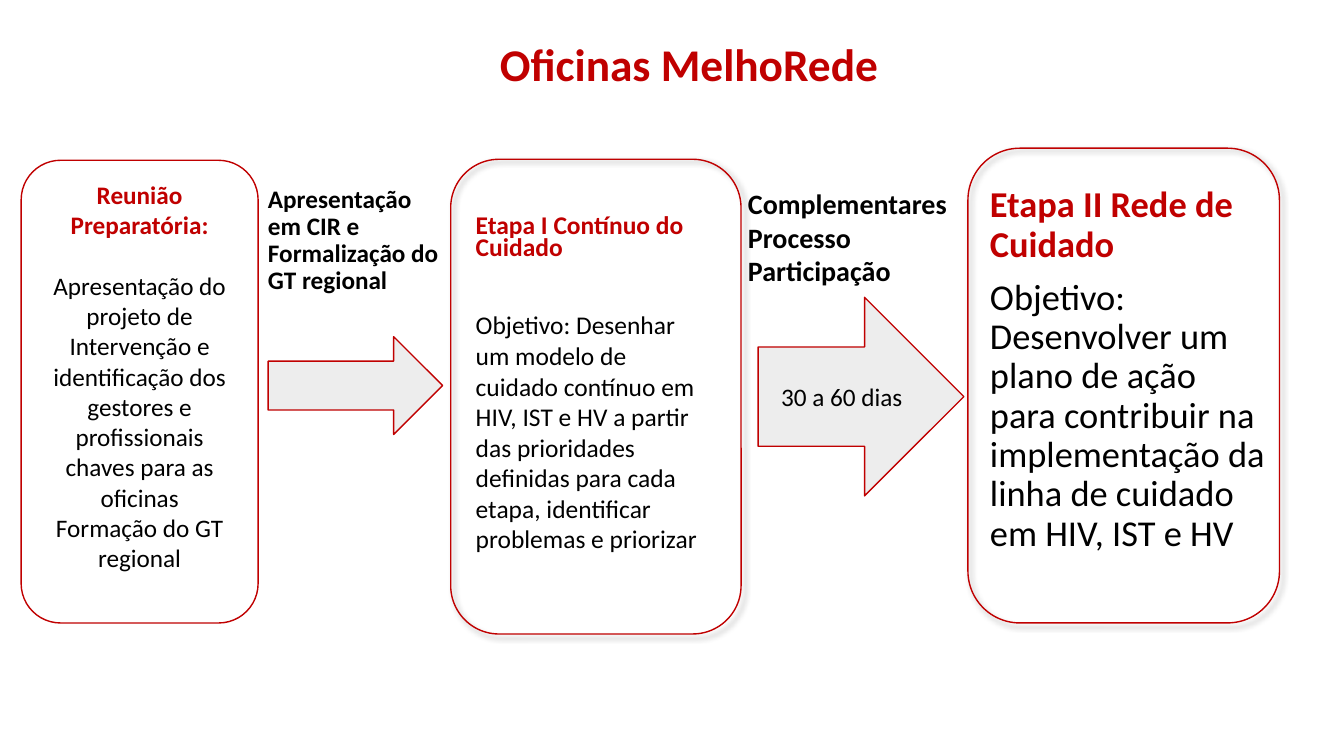
from lxml import etree
from pptx import Presentation
from pptx.dml.color import RGBColor
from pptx.enum.shapes import MSO_SHAPE as Shape
from pptx.enum.text import MSO_ANCHOR as Anchor, PP_ALIGN as Align
from pptx.oxml.ns import qn
from pptx.util import Inches, Pt

RED, BLACK, GREY = "C00000", "000000", "EDEDED"


def color(hex_code):
    """Turn a hex string into a colour."""
    return RGBColor.from_string(hex_code)


def write(frame, paragraphs, size, align=Align.LEFT, spacing=None):
    """Fill a frame with (text, colour, bold, points before) paragraphs."""
    frame.word_wrap = True
    frame.text = "\n".join(text for text, *_ in paragraphs)
    for paragraph, (_, ink, bold, before) in zip(frame.paragraphs, paragraphs):
        paragraph.alignment = align
        paragraph.space_before = Pt(before)
        if spacing:
            paragraph.line_spacing = spacing
        font = paragraph.runs[0].font
        font.name, font.size, font.bold = "Calibri", Pt(size), bold
        font.color.rgb = color(ink)


def add_text(slide, box, paragraphs, size, align=Align.LEFT, spacing=None):
    """Place a text box and return its frame."""
    frame = slide.shapes.add_textbox(*map(Inches, box)).text_frame
    write(frame, paragraphs, size, align, spacing)
    return frame


def add_outline(slide, kind, box, fill=None):
    """Place a red-outlined preset shape."""
    outline = slide.shapes.add_shape(kind, *map(Inches, box))
    outline.shadow.inherit = False
    outline.line.color.rgb = color(RED)
    outline.line.width = Pt(1)
    if fill:
        outline.fill.solid()
        outline.fill.fore_color.rgb = color(fill)
    else:
        outline.fill.background()
    return outline


def add_shadow(card):
    """Cast a soft shadow to the lower right of a card."""
    effects = card._element.spPr.find(qn("a:effectLst"))
    shadow = etree.SubElement(effects, qn("a:outerShdw"), blurRad=str(Pt(4)),
                              dist=str(Pt(3)), dir="2700000", algn="tl", rotWithShape="0")
    tone = etree.SubElement(shadow, qn("a:srgbClr"), val=BLACK)
    etree.SubElement(tone, qn("a:alpha"), val="40000")


def add_title(slide, box):
    """Write the slide title."""
    frame = add_text(slide, box, [("Oficinas MelhoRede", RED, True, 0)], 32.4, Align.CENTER, 0.9)
    frame.vertical_anchor = Anchor.MIDDLE


def add_preparation(slide, box):
    """Draw the preparatory meeting card."""
    card = add_outline(slide, Shape.ROUNDED_RECTANGLE, box)
    card.text_frame.vertical_anchor = Anchor.TOP
    card.text_frame.margin_top = Inches(0.07)
    write(card.text_frame, [
        ("Reunião Preparatória:", RED, True, 0),
        ("Apresentação do projeto de Intervenção e identificação dos gestores e "
         "profissionais chaves para as oficinas", BLACK, False, 22),
        ("Formação do GT regional", BLACK, False, 0),
    ], 18, Align.CENTER)


def add_stage_one(slide, box):
    """Draw the first stage card."""
    left, top, width, _ = box
    frame = add_text(slide, (left + 0.15, top + 0.53, width - 0.42, 3.91), [
        ("Etapa I Contínuo do Cuidado", RED, True, 0),
        ("Objetivo: Desenhar um modelo de cuidado contínuo em HIV, IST e HV a partir das "
         "prioridades definidas para cada etapa, identificar problemas e priorizar",
         BLACK, False, 35),
    ], 18.2)
    frame.paragraphs[0].line_spacing = 0.7
    add_shadow(add_outline(slide, Shape.ROUNDED_RECTANGLE, box))


def add_stage_two(slide, box):
    """Draw the second stage card."""
    left, top, width, _ = box
    add_text(slide, (left + 0.12, top + 0.33, width - 0.16, 4.18), [
        ("Etapa II Rede de Cuidado", RED, True, 0),
        ("Objetivo: Desenvolver um plano de ação para contribuir na implementação da "
         "linha de cuidado em HIV, IST e HV", BLACK, False, 10),
    ], 26, spacing=0.9)
    add_shadow(add_outline(slide, Shape.ROUNDED_RECTANGLE, box))


def add_regional_step(slide, box):
    """Draw the step from the meeting to the first stage."""
    left, top, width, _ = box
    add_text(slide, (left, top, width, 1.41),
             [("Apresentação em CIR e Formalização do GT regional", BLACK, True, 0)],
             18, spacing=0.9)
    add_outline(slide, Shape.RIGHT_ARROW, (left + 0.1, top + 1.54, 1.73, 0.97), GREY)


def add_waiting_step(slide, box):
    """Draw the step between the two stages."""
    left, top, width, _ = box
    add_outline(slide, Shape.RIGHT_ARROW, (left + 0.2, top + 1.15, 2.04, 1.97), GREY)
    add_text(slide, (left + 0.33, top + 1.93, 1.64, 0.4),
             [("30 a 60 dias", BLACK, False, 0)], 18)
    topics = ("Complementares", "Processo", "Participação")
    add_text(slide, (left, top, width, 1.41), [(topic, BLACK, True, 0) for topic in topics], 20)


def main():
    """Build and save the slide."""
    deck = Presentation()
    deck.slide_width, deck.slide_height = Inches(13.33), Inches(7.5)
    slide = deck.slides.add_slide(deck.slide_layouts[6])
    add_title(slide, (0.92, 0.26, 11.83, 0.81))
    add_preparation(slide, (0.21, 1.59, 2.35, 4.59))
    add_regional_step(slide, (2.56, 1.8, 1.9, 2.51))
    add_stage_one(slide, (4.47, 1.58, 2.88, 4.71))
    add_waiting_step(slide, (7.32, 1.8, 2.38, 3.12))
    add_stage_two(slide, (9.6, 1.47, 3.09, 4.71))
    deck.save("out.pptx")


if __name__ == "__main__":
    main()
